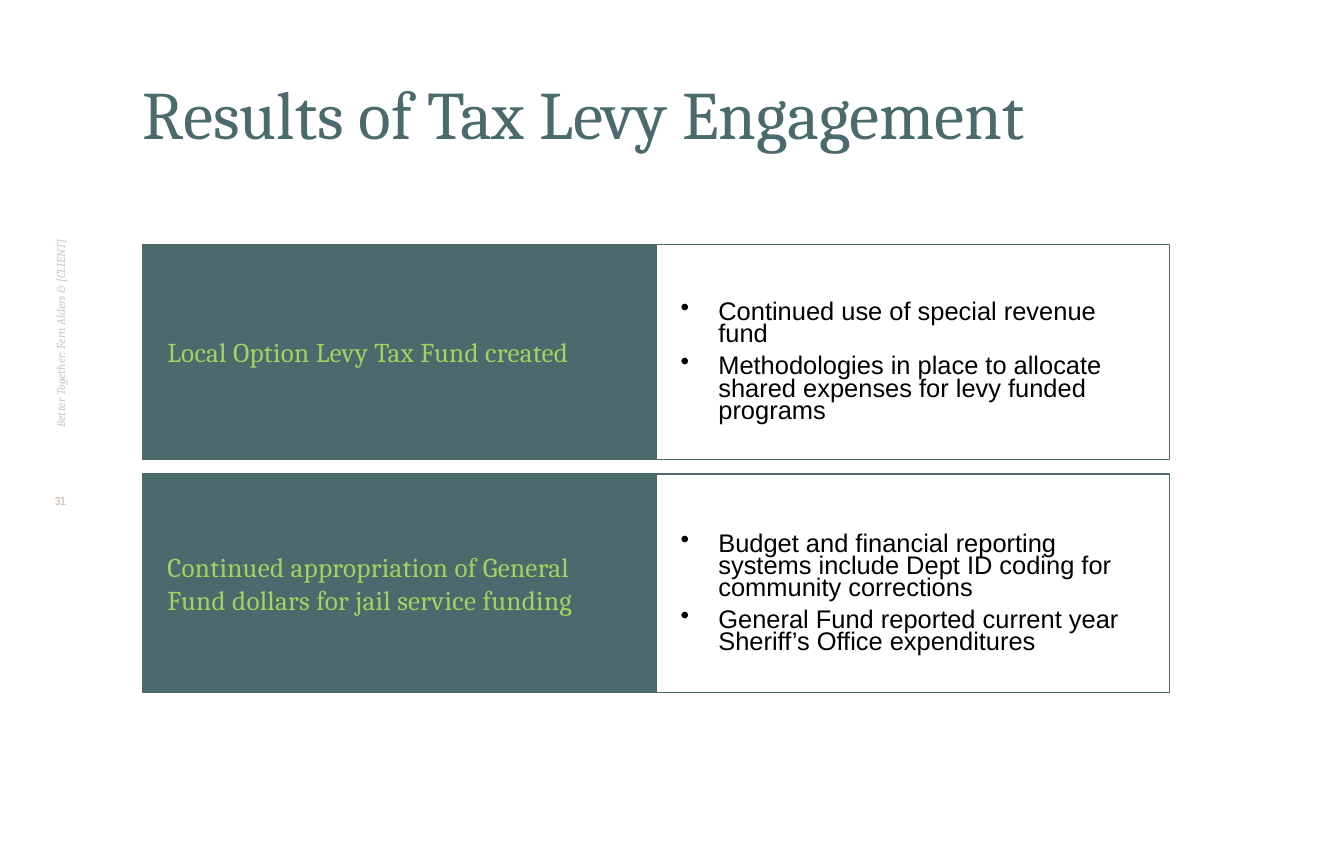
import pptx
import pptx.util
import pptx.dml.color
import pptx.enum.shapes
import pptx.enum.text
import pptx.oxml.ns
import lxml.etree

Pt = pptx.util.Pt
Align = pptx.enum.text.PP_ALIGN
Anchor = pptx.enum.text.MSO_ANCHOR
PX = 9144  # 100 px to the inch
COLORS = {"teal": "4B6A6E", "lime": "A6D060", "sand": "D1C6BD", "black": "000000"}


def color(name):
    return pptx.dml.color.RGBColor.from_string(COLORS[name])


def write(shape, text, font, size, ink, anchor=Anchor.MIDDLE, pad=(0, 0, 0, 0), align=Align.LEFT):
    """Fill a shape with text in one style; pad is left, top, right, bottom."""
    frame = shape.text_frame
    frame.word_wrap = True
    frame.vertical_anchor = anchor
    frame.margin_left, frame.margin_top, frame.margin_right, frame.margin_bottom = [n * PX for n in pad]
    frame.text = text
    for para in frame.paragraphs:
        para.alignment = align
        for run in para.runs:
            run.font.name = font
            run.font.size = Pt(size)
            run.font.color.rgb = color(ink)
    return frame


deck = pptx.Presentation()
deck.slide_width, deck.slide_height = 1100 * PX, 700 * PX
slide = deck.slides.add_slide(deck.slide_layouts[6])
shapes = slide.shapes

# Side note, page number and title
note = shapes.add_textbox(31 * PX, 50 * PX, 37 * PX, 300 * PX)
frame = write(note, "Better Together: Fern Alders & [CLIENT]", "Cambria", 7, "sand")
frame.paragraphs[0].runs[0].font.italic = True
frame._txBody.bodyPr.set("vert", "vert270")

page = shapes.add_textbox(31 * PX, 404 * PX, 37 * PX, 38 * PX)
frame = write(page, "31", "Arial Narrow", 7, "sand", Anchor.TOP, align=Align.CENTER)
frame.paragraphs[0].runs[0].font.bold = True

title = shapes.add_textbox(117 * PX, 50 * PX, 908 * PX, 75 * PX)
write(title, "Results of Tax Levy Engagement", "Cambria", 40, "teal", Anchor.BOTTOM)

# Rows: top, height, heading, bullets
LEFT, WIDTH = 117, 420
rows = [
    (200, 176, "Local Option Levy Tax Fund created", [
        "Continued use of special revenue fund",
        "Methodologies in place to allocate shared expenses for levy funded programs",
    ]),
    (388, 179, "Continued appropriation of General Fund dollars for jail service funding", [
        "Budget and financial reporting systems include Dept ID coding for community corrections",
        "General Fund reported current year Sheriff’s Office expenditures",
    ]),
]
for top, height, heading, points in rows:
    cells = []
    for col in range(2):
        cell = shapes.add_shape(pptx.enum.shapes.MSO_SHAPE.RECTANGLE,
                                (LEFT + col * WIDTH) * PX, top * PX, WIDTH * PX, height * PX)
        cell.shadow.inherit = False
        cell.line.color.rgb = color("teal")
        cell.line.width = Pt(0.75)
        cells.append(cell)
    head, body = cells

    head.fill.solid()
    head.fill.fore_color.rgb = color("teal")
    frame = write(head, heading, "Cambria", 16, "lime", pad=(20, 0, 20, 0))
    frame.paragraphs[0].runs[0].font._element.set("spc", "20")

    body.fill.background()
    frame = write(body, "\n".join(points), "Arial", 15, "black", pad=(20, 20, 20, 0))
    for i, para in enumerate(frame.paragraphs):
        props = para._p.get_or_add_pPr()
        props.set("marL", str(31 * PX))
        props.set("indent", str(-31 * PX))
        bullet = lxml.etree.SubElement(props, pptx.oxml.ns.qn("a:buChar"))
        bullet.set("char", "•")
        para.line_spacing = Pt(13)
        if i:
            para.space_before = Pt(6)

deck.save("out.pptx")
